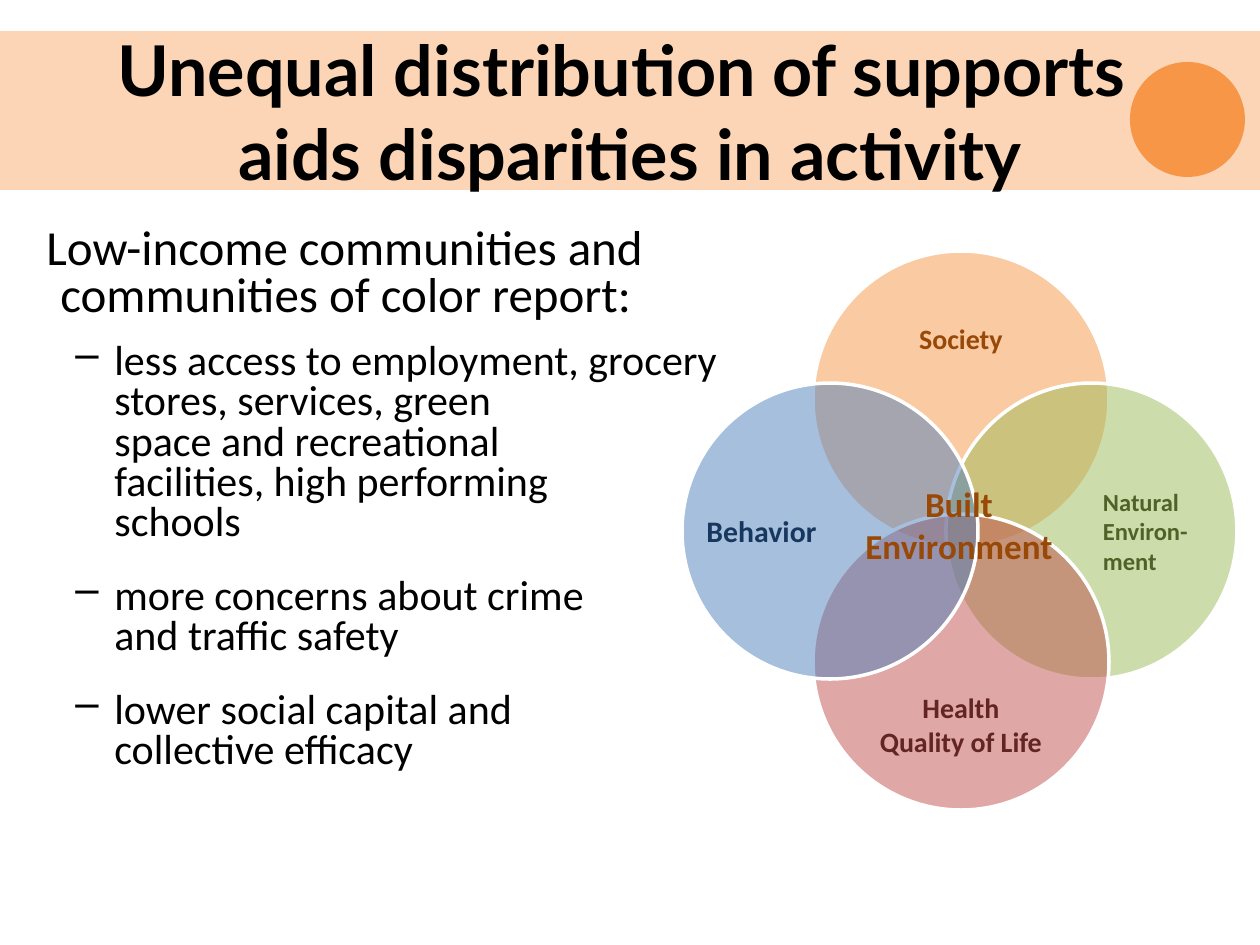
from lxml import etree
from pptx import Presentation
from pptx.dml.color import RGBColor
from pptx.enum.shapes import MSO_SHAPE
from pptx.enum.text import MSO_ANCHOR, MSO_AUTO_SIZE, PP_ALIGN
from pptx.oxml.ns import qn
from pptx.util import Pt

EMU_PER_PX = 914400 / 126
OVAL = MSO_SHAPE.OVAL
MIDDLE, TOP = MSO_ANCHOR.MIDDLE, MSO_ANCHOR.TOP
CENTER, LEFT = PP_ALIGN.CENTER, PP_ALIGN.LEFT
NO_FIT = MSO_AUTO_SIZE.NONE
TITLE_ONLY = 5

ORANGE, WHITE, BLACK = "F79646", "FFFFFF", "000000"


def px(value):
    return round(value * EMU_PER_PX)


def color(code):
    return RGBColor.from_string(code)


class SlideBuilder:
    """Holds the text style and the current slide."""

    def __init__(self, deck, font="Calibri"):
        self.page = deck.slides.add_slide(deck.slide_layouts[TITLE_ONLY])
        self.font = font

    def fill(self, shape, code, opacity=100):
        shape.fill.solid()
        shape.fill.fore_color.rgb = color(code)
        if opacity < 100:
            tone = shape._element.spPr.find(qn("a:solidFill")).find(qn("a:srgbClr"))
            etree.SubElement(tone, qn("a:alpha"), val=str(opacity * 1000))

    def frame(self, box, anchor, wrap=True, margin=None):
        frame = box.text_frame
        settings = {"auto_size": NO_FIT, "word_wrap": wrap, "vertical_anchor": anchor}
        if margin is not None:
            for side in ("left", "top", "right", "bottom"):
                settings["margin_" + side] = px(margin)
        for name, value in settings.items():
            setattr(frame, name, value)
        return frame

    def put_lines(self, frame, lines, size, code, bold=False, align=LEFT, font=None):
        style = {"name": font or self.font, "size": Pt(size), "bold": bold}
        for index, line in enumerate(lines):
            para = frame.paragraphs[0] if index == 0 else frame.add_paragraph()
            para.text = line
            para.alignment = align
            for span in para.runs:
                for name, value in style.items():
                    setattr(span.font, name, value)
                span.font.color.rgb = color(code)

    def title(self, place, lines, size, font):
        box = self.page.shapes.title
        for name, value in zip(("left", "top", "width", "height"), place):
            setattr(box, name, px(value))
        self.fill(box, ORANGE, 40)
        self.put_lines(self.frame(box, MIDDLE), lines, size, BLACK, True, CENTER, font)

    def circle(self, place, code, opacity=100, outline=None):
        shape = self.page.shapes.add_shape(OVAL, *map(px, place))
        shape.shadow.inherit = False
        self.fill(shape, code, opacity)
        if outline:
            shape.line.color.rgb = color(outline)
            shape.line.width = Pt(2)
        else:
            shape.line.fill.background()

    def label(self, place, lines, size, code, align=CENTER, anchor=MIDDLE,
              wrap=True, margin=0):
        box = self.page.shapes.add_textbox(*map(px, place))
        self.put_lines(self.frame(box, anchor, wrap, margin), lines, size, code, True, align)

    def outline_text(self, place, lead, points):
        box = self.page.shapes.add_textbox(*map(px, place))
        frame = self.frame(box, TOP)
        self.put_lines(frame, [lead] + points, 24, BLACK)
        for index, para in enumerate(frame.paragraphs):
            para.line_spacing = 0.8
            props = para._p.get_or_add_pPr()
            margin, indent = (102, -39) if index else (48, -14)
            props.set("marL", str(px(margin)))
            props.set("indent", str(px(indent)))
            if index:
                para.space_before, para.space_after = Pt(12), Pt(7)
                etree.SubElement(props, qn("a:buChar"), char="–")
        for span in frame.paragraphs[0].runs:
            span.font.size = Pt(28)


def main():
    deck = Presentation()
    deck.slide_width, deck.slide_height = px(1260), px(945)
    slide = SlideBuilder(deck)

    # Title band with its accent circle
    slide.title((0, 31, 1260, 159),
                ["Unequal distribution of supports ", "aids disparities in activity"],
                40, "Lato")
    slide.circle((1130, 62, 115, 115), ORANGE)

    # Findings
    slide.outline_text(
        (0, 222, 767, 672),
        "Low-income communities and communities of color report:",
        ["less access to employment, grocery stores, services, green\v"
         "space and recreational\vfacilities, high performing\vschools",
         "more concerns about crime\vand traffic safety",
         "lower social capital and\vcollective efficacy"])

    # Overlapping circles: place, fill, label place, lines, size, text colour, alignment
    circles = [
        ((813, 251, 296, 296), ORANGE,
         (847, 291, 228, 95), ["Society"], 16, "984807", CENTER),
        ((946, 383, 291, 296), "9BBB59",
         (1103, 417, 112, 228), ["Natural Environ-ment"], 14, "4F6228", LEFT),
        ((813, 514, 296, 296), "C0504D",
         (847, 677, 228, 95), ["Health", "Quality of Life"], 16, "632523", CENTER),
        ((682, 383, 296, 296), "4F81BD",
         (704, 417, 115, 228), ["Behavior"], 17, "17375E", CENTER),
    ]
    for place, tone, label_place, lines, size, ink, align in circles:
        slide.circle(place, tone, 50, WHITE)
        slide.label(label_place, lines, size, ink, align)

    # Shared centre
    slide.label((852, 476, 214, 97), ["Built", "Environment"], 20, "984807",
                anchor=TOP, wrap=False, margin=None)

    deck.save("out.pptx")


if __name__ == "__main__":
    main()
